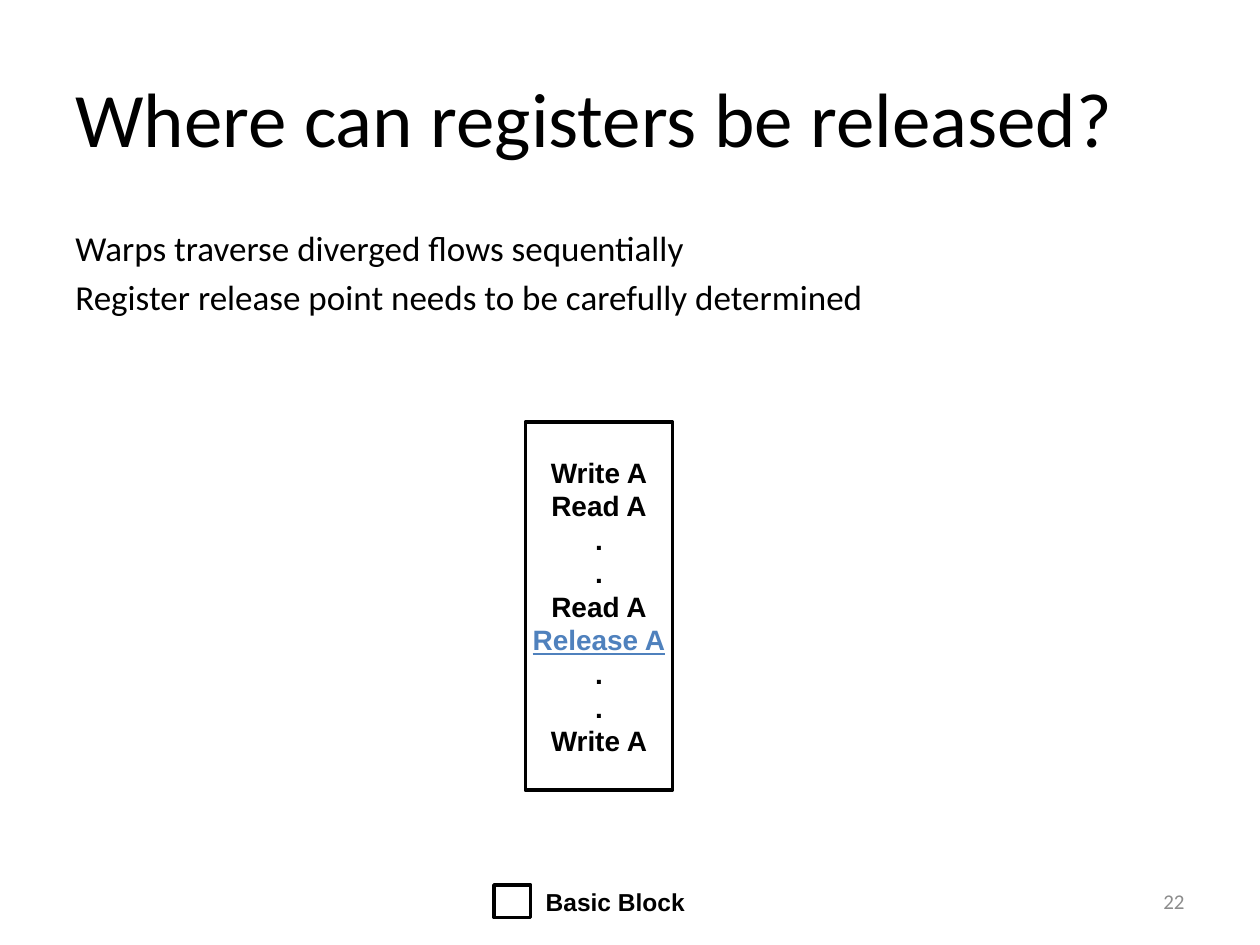
from pptx import Presentation
from pptx.dml.color import RGBColor
from pptx.enum.shapes import MSO_SHAPE
from pptx.enum.text import MSO_ANCHOR, PP_ALIGN
from pptx.util import Cm, Pt

RECTANGLE = MSO_SHAPE.RECTANGLE
TOP, MIDDLE = MSO_ANCHOR.TOP, MSO_ANCHOR.MIDDLE
LEFT, CENTER, RIGHT = PP_ALIGN.LEFT, PP_ALIGN.CENTER, PP_ALIGN.RIGHT

COLORS = {"ink": "000000", "release": "4F81BD", "number": "8C8C8C"}
BODY_LINES = [
    "Warps traverse diverged flows sequentially",
    "Register release point needs to be carefully determined",
]
INSTRUCTIONS = ["Write A", "Read A", ".", ".", "Read A", "Release A", ".", ".", "Write A"]


def color(name):
    return RGBColor.from_string(COLORS[name])


def write(shape, lines, size, font="Calibri", ink="ink", bold=False,
          align=LEFT, anchor=MIDDLE, before=0, inset=True):
    """Fill a shape with one evenly formatted paragraph per line."""
    frame = shape.text_frame
    frame.word_wrap = True
    frame.vertical_anchor = anchor
    if not inset:
        frame.margin_left = frame.margin_right = 0
        frame.margin_top = frame.margin_bottom = 0
    frame.text = "\n".join(lines)
    for para in frame.paragraphs:
        para.alignment = align
        para.space_before = Pt(before)
        for span in para.runs:
            span.font.name = font
            span.font.size = Pt(size)
            span.font.bold = bold
            span.font.color.rgb = color(ink)


def add_text(page, box, lines, size, **style):
    shape = page.shapes.add_textbox(*map(Cm, box))
    write(shape, lines, size, **style)


def add_outline(page, box):
    """Add an unfilled rectangle with a black border."""
    shape = page.shapes.add_shape(RECTANGLE, *map(Cm, box))
    shape.shadow.inherit = False
    shape.fill.background()
    shape.line.color.rgb = color("ink")
    shape.line.width = Pt(2)
    return shape


def add_basic_block(page, box):
    block = add_outline(page, box)
    write(block, INSTRUCTIONS, 16, font="Arial", bold=True, align=CENTER, inset=False)
    for para in block.text_frame.paragraphs:
        if para.text.startswith("Release"):
            for span in para.runs:
                span.font.underline = True
                span.font.color.rgb = color("release")


def add_legend(page, box):
    """Place a swatch at the left of the box and its label at the right."""
    left, top, width, height = box
    swatch_width, swatch_height, gap = 0.74, 0.66, 0.22
    add_outline(page, (left, top + (height - swatch_height) / 2, swatch_width, swatch_height))
    offset = swatch_width + gap
    add_text(page, (left + offset, top, width - offset, height), ["Basic Block"], 14,
             font="Arial", bold=True, align=CENTER, inset=False)


def main():
    deck = Presentation()
    deck.slide_width, deck.slide_height = Cm(25.4), Cm(19.05)
    page = deck.slides.add_slide(deck.slide_layouts[6])
    add_basic_block(page, (10.59, 8.51, 2.97, 7.42))
    add_text(page, (1.27, 0.76, 22.86, 3.18), ["Where can registers be released?"], 44)
    add_text(page, (1.27, 4.45, 22.86, 12.57), BODY_LINES, 20, anchor=TOP, before=4)
    add_legend(page, (9.96, 17.7, 3.93, 0.94))
    add_text(page, (18.21, 17.65, 5.92, 1.02), ["22"], 12, ink="number", align=RIGHT)
    deck.save("out.pptx")


if __name__ == "__main__":
    main()
